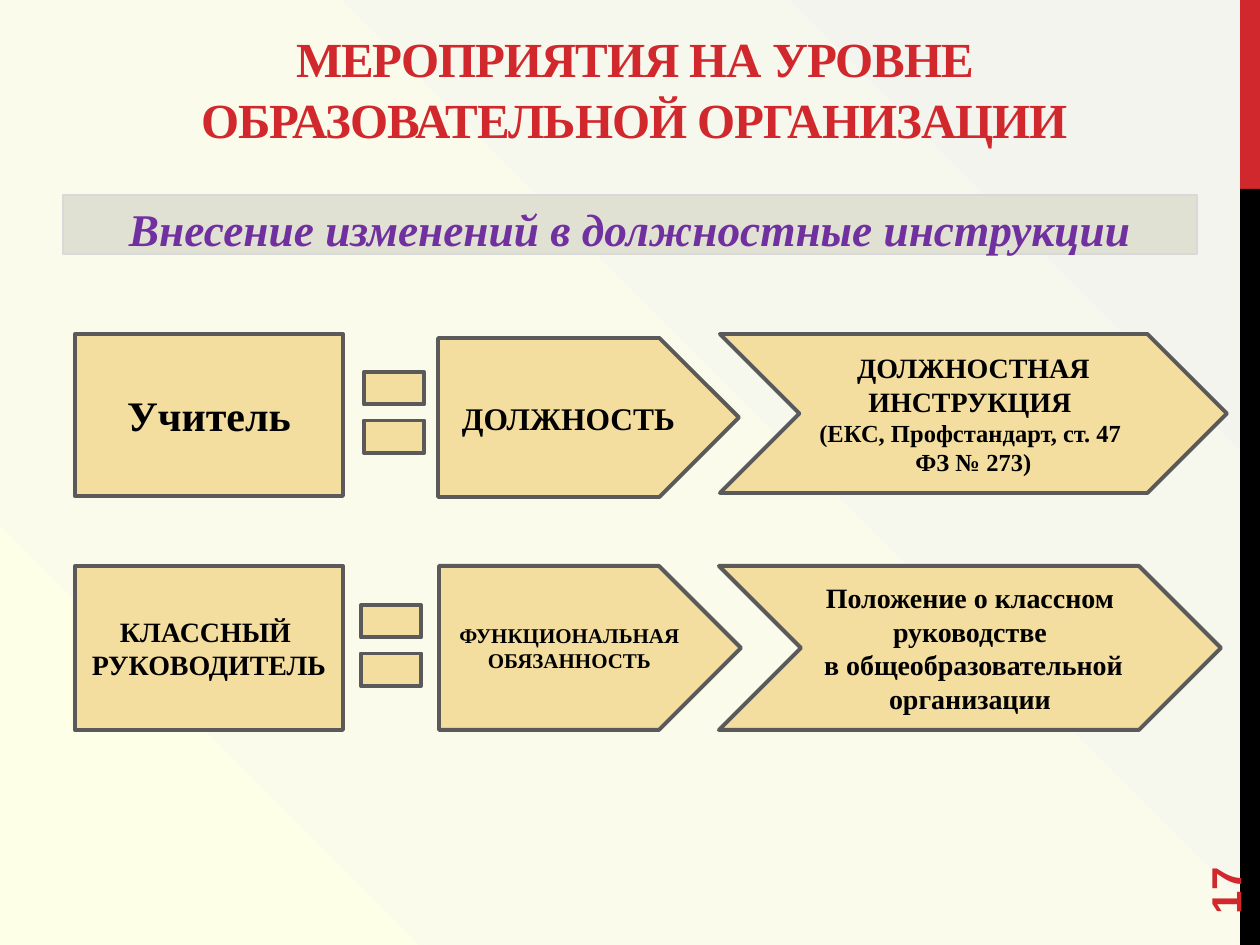
from lxml import etree
from pptx import Presentation
from pptx import util as u
from pptx.dml.color import RGBColor
from pptx.enum import shapes, text
from pptx.oxml.ns import qn

PX = 914400 / 126
SERIF, SANS = "Times New Roman", "Arial"
C = {"red": "D1282E", "black": "000000", "purple": "7030A0", "sand": "F3DD9F",
     "edge": "5A5A5A", "bar": "E1E1D3", "bar_edge": "D9D9D9"}
BACKGROUND = [(0, "FDFFE7"), (38, "FAFBEA"), (99, "F4F4EF")]
KIND = shapes.MSO_SHAPE
ALIGN, ANCHOR = text.PP_ALIGN, text.MSO_ANCHOR


def px(v):
    return u.Emu(round(v * PX))


def rgb(name):
    return RGBColor.from_string(C[name])


def set_font(font, size, color="black", name=SERIF, italic=False):
    font.name, font.size, font.bold, font.italic = name, u.Pt(size), True, italic
    font.color.rgb = rgb(color)


def add_shape(s, kind, box, fill, line=None, weight=2.25):
    sp = s.shapes.add_shape(kind, *map(px, box))
    sp.shadow.inherit = False
    sp.fill.solid()
    sp.fill.fore_color.rgb = rgb(fill)
    if line:
        sp.line.color.rgb = rgb(line)
        sp.line.width = u.Pt(weight)
    else:
        sp.line.fill.background()
    return sp


def write(tf, lines, anchor=ANCHOR.MIDDLE, align=ALIGN.CENTER, **style):
    tf.word_wrap = True
    tf.auto_size = text.MSO_AUTO_SIZE.NONE
    tf.vertical_anchor = anchor
    for i, (line, size) in enumerate(lines):
        p = tf.paragraphs[0] if i == 0 else tf.add_paragraph()
        p.alignment = align
        p.add_run().text = line
        set_font(p.font, size, **style)
    return tf


def add_background(s):
    fill = s.background.fill
    fill.gradient()
    fill.gradient_angle = 45
    stops = s.background._cSld.find(".//" + qn("a:gsLst"))
    for stop in list(stops):
        stops.remove(stop)
    for pos, color in BACKGROUND:
        gs = etree.SubElement(stops, qn("a:gs"), pos=str(pos * 1000))
        etree.SubElement(gs, qn("a:srgbClr"), val=color)


def add_side_band(s, box):
    x, y, w, h = box
    top = h // 5
    add_shape(s, KIND.RECTANGLE, (x, y, w, top), "red")
    add_shape(s, KIND.RECTANGLE, (x, y + top, w, h - top), "black")


def add_title(s, box):
    sp = s.shapes.title
    sp.left, sp.top, sp.width, sp.height = map(px, box)
    tf = write(sp.text_frame, [("МЕРОПРИЯТИЯ НА УРОВНЕ ОБРАЗОВАТЕЛЬНОЙ ОРГАНИЗАЦИИ", 28)],
               ANCHOR.BOTTOM, color="red")
    p = tf.paragraphs[0]
    p.line_spacing = 1.05
    p.runs[0].font._element.set("spc", "-60")


def add_subtitle(s, box):
    sp = add_shape(s, KIND.RECTANGLE, box, "bar", "bar_edge", 0.75)
    tf = write(sp.text_frame, [("Внесение изменений в должностные инструкции", 25.9)],
               ANCHOR.TOP, color="purple", italic=True)
    tf.paragraphs[0].space_before = u.Pt(4)


def add_page_number(s, box):
    sp = s.shapes.add_textbox(*map(px, box))
    sp.rotation = 270
    write(sp.text_frame, [("17", 24)], align=ALIGN.LEFT, color="red", name=SANS)


def add_row(s, origin, parts):
    x, y = origin
    for kind, (dx, dy, w, h), lines in parts:
        sp = add_shape(s, kind, (x + dx, y + dy, w, h), "sand", "edge")
        write(sp.text_frame, lines)


TEACHER = [
    (KIND.RECTANGLE, (0, 0, 268, 162), [("Учитель", 24)]),
    (KIND.MATH_EQUAL, (278, 10, 82, 137), []),
    (KIND.PENTAGON, (363, 4, 301, 159), [("ДОЛЖНОСТЬ", 18)]),
    (KIND.CHEVRON, (645, 0, 507, 159), [
        ("ДОЛЖНОСТНАЯ ИНСТРУКЦИЯ ", 16),
        ("(ЕКС, Профстандарт, ст. 47 ", 14),
        ("ФЗ № 273)", 14)]),
]
CLASS_TEACHER = [
    (KIND.RECTANGLE, (0, 0, 268, 164), [("КЛАССНЫЙ ", 16), ("РУКОВОДИТЕЛЬ", 16)]),
    (KIND.MATH_EQUAL, (275, 11, 82, 137), []),
    (KIND.PENTAGON, (364, 0, 302, 164), [("ФУНКЦИОНАЛЬНАЯ ОБЯЗАННОСТЬ", 12)]),
    (KIND.CHEVRON, (644, 0, 502, 164), [
        ("Положение о классном руководстве", 16),
        (" в общеобразовательной организации", 16)]),
]


def main():
    prs = Presentation()
    prs.slide_width, prs.slide_height = px(1260), px(945)
    s = prs.slides.add_slide(prs.slide_layouts[5])
    add_background(s)
    add_side_band(s, (1240, 0, 20, 945))
    add_title(s, (63, 45, 1143, 110))
    add_page_number(s, (1134, 811, 181, 50))
    add_subtitle(s, (63, 195, 1134, 59))
    add_row(s, (75, 334), TEACHER)
    add_row(s, (75, 566), CLASS_TEACHER)
    prs.save("out.pptx")


if __name__ == "__main__":
    main()
